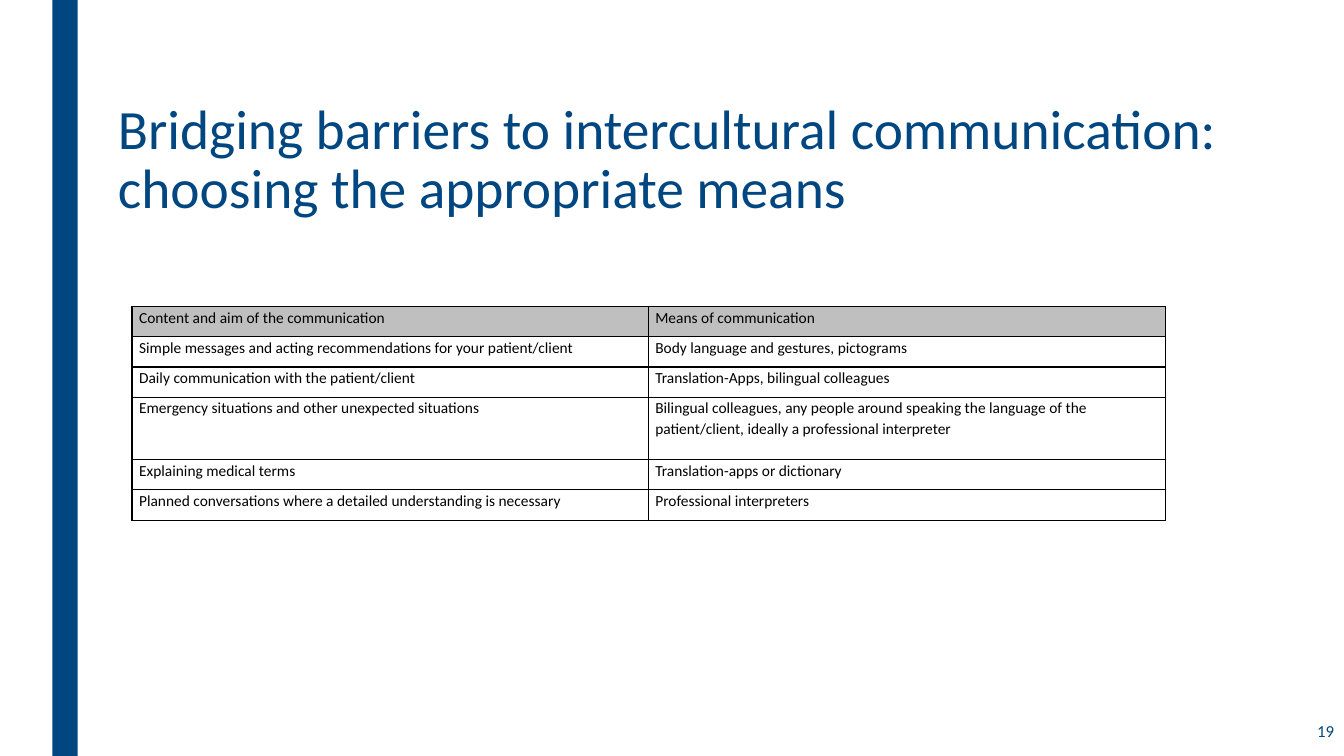
from dataclasses import dataclass
from typing import Any

from lxml import etree
from pptx import Presentation
from pptx import util as u
from pptx.dml.color import RGBColor
from pptx.enum import shapes, text
from pptx.oxml import ns

SCALE = 9144  # EMU in one px, at 100 px to the inch


@dataclass(frozen=True)
class Theme:
    face: str = "Calibri"
    blue: str = "004680"
    black: str = "000000"
    white: str = "FFFFFF"
    grey: str = "BFBFBF"
    title: float = 39.6
    small: float = 11
    page: float = 12
    rule: float = 1


@dataclass(frozen=True)
class Box:
    left: int
    top: int
    width: int
    height: int

    def emu(self) -> tuple[int, ...]:
        return tuple(px(v) for v in (self.left, self.top, self.width, self.height))


@dataclass(frozen=True)
class Row:
    aim: str
    means: str
    height: int = 30
    fill: str = Theme.white


THEME = Theme()
WIDTHS = (512, 513)
ROWS = (
    Row("Content and aim of the communication", "Means of communication", fill=THEME.grey),
    Row("Simple messages and acting recommendations for your patient/client",
        "Body language and gestures, pictograms"),
    Row("Daily communication with the patient/client",
        "Translation-Apps, bilingual colleagues"),
    Row("Emergency situations and other unexpected situations",
        "Bilingual colleagues, any people around speaking the language of the "
        "patient/client, ideally a professional interpreter", height=62),
    Row("Explaining medical terms", "Translation-apps or dictionary"),
    Row("Planned conversations where a detailed understanding is necessary",
        "Professional interpreters"),
)


def px(count: int) -> int:
    return count * SCALE


def apply(target: Any, form: dict[str, Any]) -> None:
    for name, value in form.items():
        setattr(target, name, value)


def write(frame: Any, words: str, size: float, shade: str, form: dict[str, Any]) -> None:
    """Fill a frame with one paragraph in the theme face."""
    frame.text = words
    para = frame.paragraphs[0]
    apply(para, form)
    apply(para.font, {"name": THEME.face, "size": u.Pt(size), "bold": False})
    para.font.color.rgb = RGBColor.from_string(shade)


def paint(shape: Any, shade: str) -> None:
    shape.fill.solid()
    shape.fill.fore_color.rgb = RGBColor.from_string(shade)


def border(cell: Any) -> None:
    props = cell._tc.get_or_add_tcPr()
    for side in ("lnL", "lnR", "lnT", "lnB"):
        line = etree.SubElement(props, ns.qn(f"a:{side}"), w=str(u.Pt(THEME.rule)))
        fill = etree.SubElement(line, ns.qn("a:solidFill"))
        etree.SubElement(fill, ns.qn("a:srgbClr"), val=THEME.black)


def add_bar(slide: Any, box: Box) -> None:
    bar = slide.shapes.add_shape(shapes.MSO_SHAPE.RECTANGLE, *box.emu())
    bar.shadow.inherit = False
    paint(bar, THEME.blue)
    bar.line.fill.background()


def add_title(slide: Any, box: Box, words: str) -> None:
    title = slide.shapes.title
    apply(title, dict(zip(("left", "top", "width", "height"), box.emu())))
    apply(title.text_frame, {"word_wrap": True, "auto_size": text.MSO_AUTO_SIZE.NONE,
                             "vertical_anchor": text.MSO_ANCHOR.TOP})
    write(title.text_frame, words, THEME.title, THEME.blue,
          {"alignment": text.PP_ALIGN.LEFT, "line_spacing": 0.89})


def add_grid(slide: Any, left: int, top: int) -> None:
    box = Box(left, top, sum(WIDTHS), sum(row.height for row in ROWS))
    grid = slide.shapes.add_table(len(ROWS), len(WIDTHS), *box.emu()).table
    apply(grid, {"first_row": False, "horz_banding": False})
    for col, width in zip(grid.columns, WIDTHS):
        col.width = px(width)
    for line, row in zip(grid.rows, ROWS):
        line.height = px(row.height)
        for cell, words in zip(line.cells, (row.aim, row.means)):
            apply(cell, {"margin_left": px(7), "margin_right": px(7),
                         "margin_top": 0, "margin_bottom": 0})
            write(cell.text_frame, words, THEME.small, THEME.black,
                  {"line_spacing": u.Pt(15)})
            border(cell)
            paint(cell, row.fill)


def add_page(slide: Any, box: Box, words: str) -> None:
    frame = slide.shapes.add_textbox(*box.emu()).text_frame
    apply(frame, {"word_wrap": True, "vertical_anchor": text.MSO_ANCHOR.MIDDLE})
    write(frame, words, THEME.page, THEME.blue, {"alignment": text.PP_ALIGN.RIGHT})


def main() -> None:
    deck = Presentation()
    apply(deck, {"slide_width": px(1333), "slide_height": px(750)})
    slide = deck.slides.add_slide(deck.slide_layouts.get_by_name("Title Only"))
    paint(slide.background, THEME.white)
    add_bar(slide, Box(52, 0, 25, 750))
    add_title(slide, Box(107, 96, 1147, 190),
              "Bridging barriers to intercultural communication: "
              "choosing the appropriate means")
    add_grid(slide, 131, 304)
    add_page(slide, Box(1158, 703, 175, 44), "19")
    deck.save("out.pptx")


if __name__ == "__main__":
    main()
